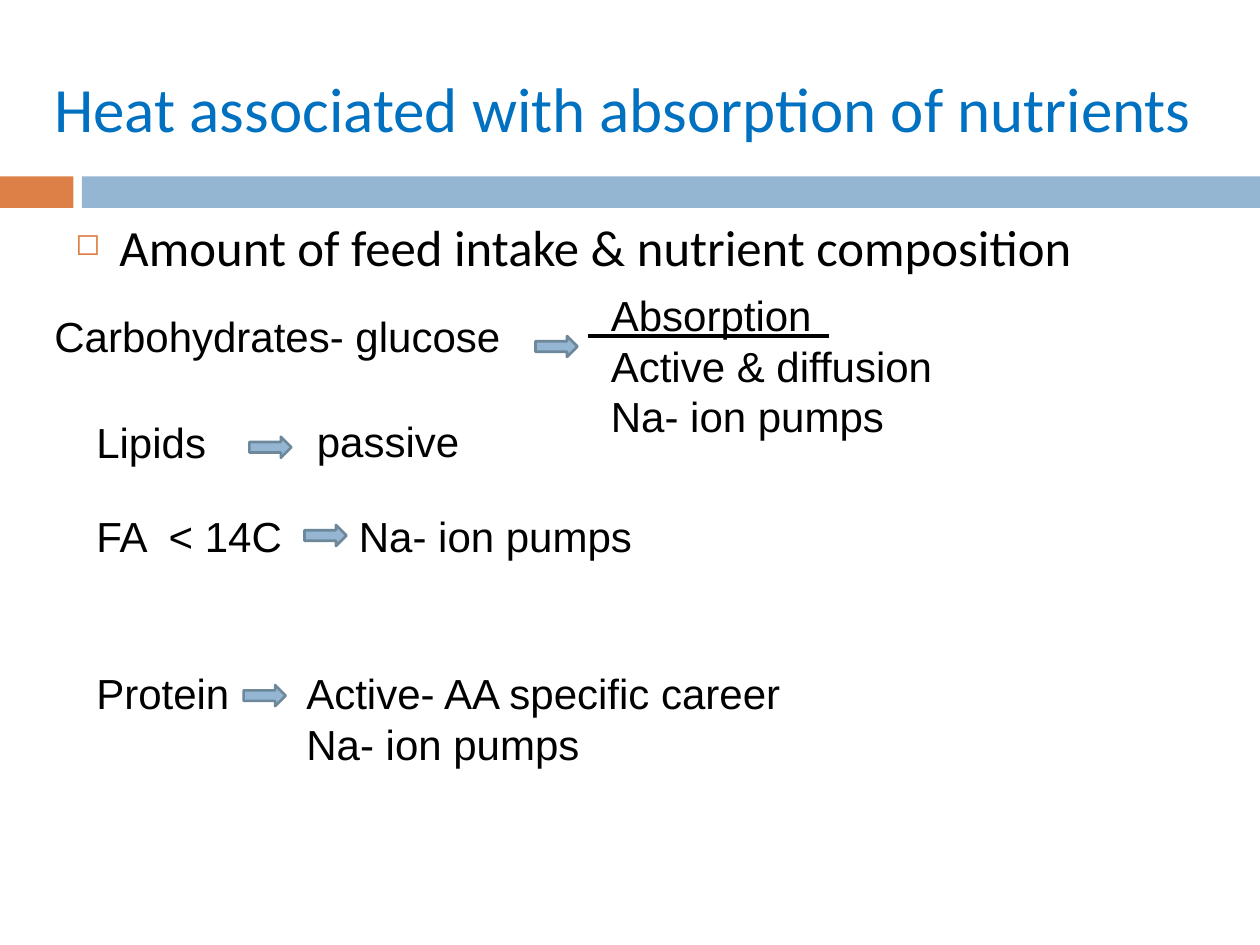
import pptx
import pptx.dml.color
import pptx.enum.shapes
import pptx.enum.text
import pptx.util
from lxml import etree

COLUMNS, ROWS = 120, 90
CELL = pptx.util.Inches(10) // COLUMNS
BLUE, ORANGE, BLACK = "94B6D2", "DD8047", "000000"


def cells(*counts):
    return [round(count * CELL) for count in counts]


def colour(target, value):
    target.rgb = pptx.dml.color.RGBColor.from_string(value)


def add_text(slide, box, lines, size=24, font="Arial", ink=BLACK):
    frame = slide.shapes.add_textbox(*cells(*box)).text_frame
    frame.word_wrap = True
    frame.text = "\n".join(lines)
    for paragraph in frame.paragraphs:
        paragraph.font.size = pptx.util.Pt(size)
        paragraph.font.name = font
        colour(paragraph.font.color, ink)
    return frame


def add_filled(slide, kind, box, fill):
    shape = slide.shapes.add_shape(kind, *cells(*box))
    shape.shadow.inherit = False
    shape.fill.solid()
    colour(shape.fill.fore_color, fill)
    shape.line.fill.background()
    return shape


def add_band(slide, left, width, fill):
    add_filled(slide, pptx.enum.shapes.MSO_SHAPE.RECTANGLE, (left, 16.8, width, 3), fill)


def add_arrow(slide, left, top):
    arrow = add_filled(slide, pptx.enum.shapes.MSO_SHAPE.RIGHT_ARROW, (left, top, 4, 2), BLUE)
    arrow.line.fill.solid()
    colour(arrow.line.color, "6D879B")
    arrow.line.width = pptx.util.Pt(1.5)


def add_rule(slide, left, right, row):
    rule = slide.shapes.add_connector(
        pptx.enum.shapes.MSO_CONNECTOR.STRAIGHT, *cells(left, row, right, row))
    colour(rule.line.color, BLACK)
    rule.line.width = pptx.util.Pt(2)
    etree.SubElement(rule._element.spPr, pptx.oxml.ns.qn("a:effectLst"))


def add_bullet(paragraph, mark, fill, percent, indent):
    paragraph.space_before = pptx.util.Pt(7)
    properties = paragraph._p.get_or_add_pPr()
    properties.set("marL", str(indent))
    properties.set("indent", str(-indent))
    bullet = (
        f'<a:buClr {pptx.oxml.ns.nsdecls("a")}><a:srgbClr val="{fill}"/></a:buClr>',
        f'<a:buSzPct {pptx.oxml.ns.nsdecls("a")} val="{percent * 1000}"/>',
        f'<a:buChar {pptx.oxml.ns.nsdecls("a")} char="{mark}"/>',
    )
    position = len(properties.findall(pptx.oxml.ns.qn("a:spcBef")))
    for offset, part in enumerate(bullet):
        properties.insert(position + offset, pptx.oxml.parse_xml(part))


def main():
    deck = pptx.Presentation()
    deck.slide_width, deck.slide_height = cells(COLUMNS, ROWS)
    slide = deck.slides.add_slide(deck.slide_layouts[6])

    add_band(slide, 0, 7, ORANGE)
    add_band(slide, 7.8, COLUMNS - 7.8, BLUE)

    title = add_text(slide, (4, 5, 111, 10.4),
                     ["Heat associated with absorption of nutrients"], 36, "Calibri", "0070C0")
    title.vertical_anchor = pptx.enum.text.MSO_ANCHOR.MIDDLE
    topic = add_text(slide, (6, 20, 108, 8),
                     ["Amount of feed intake & nutrient composition"], 29, "Calibri")
    add_bullet(topic.paragraphs[0], "◻", ORANGE, 60, pptx.util.Inches(0.35))

    nutrients = [
        ((4, 29, 48, 6), "Carbohydrates- glucose", (51, 32),
         (57, 27, 37, 15.7), ["Absorption", "Active & diffusion", "Na- ion pumps"]),
        ((8, 39.1, 19, 6), "Lipids", (23.75, 41.6), (29, 39, 19, 6), ["passive"]),
        ((8, 48, 22, 6), "FA  < 14C", (29, 50), (33, 48, 43, 6), ["Na- ion pumps"]),
        ((8, 63, 19, 6), "Protein", (23.2, 65.25),
         (28, 63, 53, 11), ["Active- AA specific career", "Na- ion pumps"]),
    ]
    for nutrient_box, nutrient, arrow, uptake_box, uptake in nutrients:
        add_text(slide, nutrient_box, [nutrient])
        add_text(slide, uptake_box, uptake)
        add_arrow(slide, *arrow)
    add_rule(slide, 56, 79, 32)

    deck.save("out.pptx")


if __name__ == "__main__":
    main()
